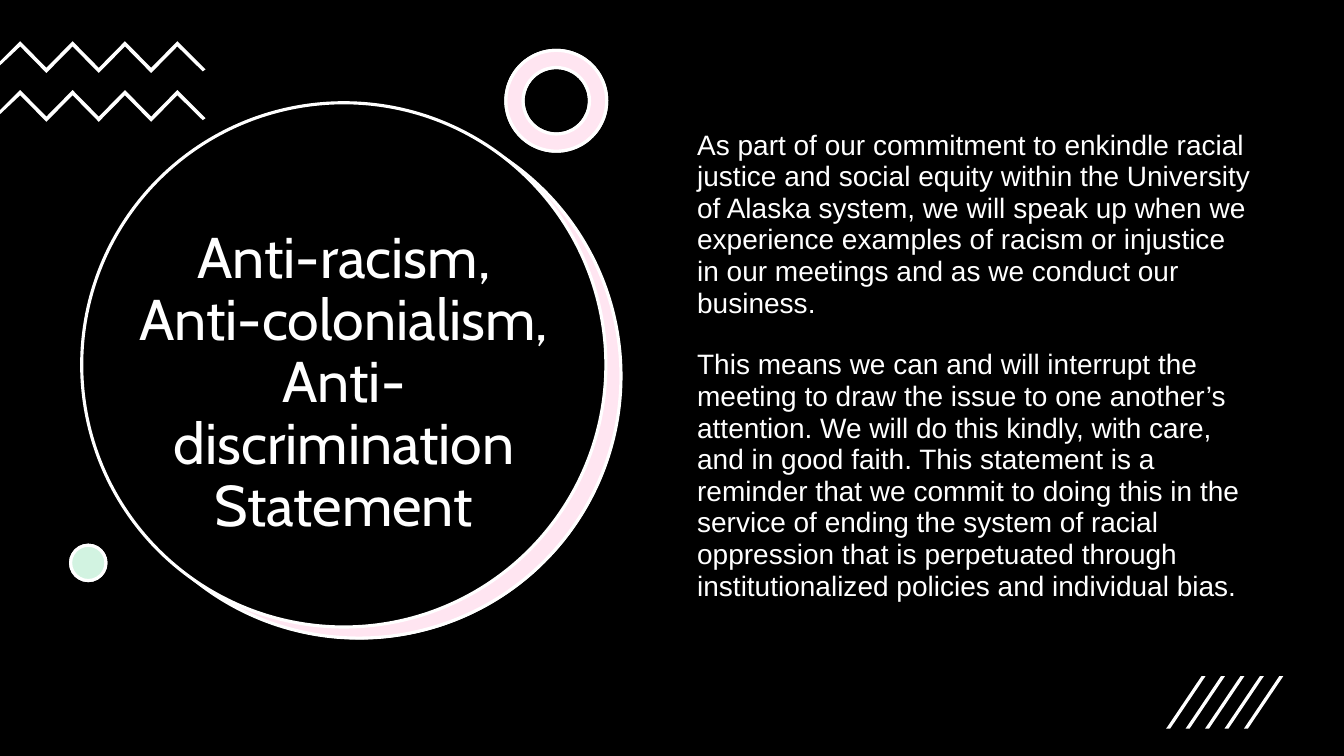
from lxml.etree import SubElement
from pptx import Presentation
from pptx.dml.color import RGBColor
from pptx.enum.shapes import MSO_SHAPE
from pptx.enum.text import MSO_ANCHOR, PP_ALIGN
from pptx.oxml.ns import qn
from pptx.util import Cm, Pt

BLACK, WHITE, PINK, GREEN = "000000", "FFFFFF", "FF80BD", "21C46B"
TITLE = "Anti-racism, Anti-colonialism, Anti-discrimination Statement"
STATEMENT = [
    "As part of our commitment to enkindle racial justice and social equity "
    "within the University of Alaska system, we will speak up when we "
    "experience examples of racism or injustice in our meetings and as we "
    "conduct our business.",
    "This means we can and will interrupt the meeting to draw the issue to one "
    "another’s attention. We will do this kindly, with care, and in good faith. "
    "This statement is a reminder that we commit to doing this in the service "
    "of ending the system of racial oppression that is perpetuated through "
    "institutionalized policies and individual bias.",
]


def paint(fill, color, opacity=100):
    """Fill with a hex colour at an opacity in percent."""
    fill.solid()
    fill.fore_color.rgb = RGBColor.from_string(color)
    if opacity < 100:
        clr = fill._xPr.find(qn("a:solidFill"))[0]
        SubElement(clr, qn("a:alpha"), val=str(opacity * 1000))


def add_round(s, kind, x, y, size, color, opacity=100, outlined=True):
    """Add a circle or ring of the given size."""
    sp = s.shapes.add_shape(kind, Cm(x), Cm(y), Cm(size), Cm(size))
    sp.shadow.inherit = False
    paint(sp.fill, color, opacity)
    if outlined:
        paint(sp.line.fill, WHITE)
        sp.line.width = Pt(2.25)
    else:
        sp.line.fill.background()
    return sp


def add_outline(s, points):
    """Add a closed white shape through points in centimetres."""
    pts = [(Cm(x), Cm(y)) for x, y in points]
    fb = s.shapes.build_freeform(*pts[0])
    fb.add_line_segments(pts[1:], close=True)
    sp = fb.convert_to_shape()
    sp.shadow.inherit = False
    paint(sp.fill, WHITE)
    sp.line.fill.background()


def add_zigzag(s, top):
    """Add a zigzag band that enters from the left edge."""
    peaks = [(0.51 + 0.66 * i, top + 0.67 * (i % 2)) for i in range(7)]
    upper = [(0, top + 0.51), *peaks, (5.18, top + 0.71)]
    lower = [(5.11, top + 0.76), *[(x, y + 0.13) for x, y in peaks[::-1]],
             (0, top + 0.61)]
    add_outline(s, upper + lower)


def add_slash(s, x, top=17.04, height=1.32):
    """Add one slanted bar."""
    add_outline(s, [(x + 0.1, top + height), (x, top + height),
                    (x + 0.89, top), (x + 0.99, top)])


def add_text(s, box, texts, font, para, anchor=MSO_ANCHOR.TOP, gap=0):
    """Add a text box with one paragraph per text."""
    tf = s.shapes.add_textbox(*[Cm(v) for v in box]).text_frame
    tf.word_wrap = True
    tf.vertical_anchor = anchor
    for i, text in enumerate(texts):
        p = tf.add_paragraph() if i else tf.paragraphs[0]
        r = p.add_run()
        r.text = text
        for name, value in para.items():
            setattr(p, name, value)
        for name, value in font.items():
            setattr(r.font, name, value)
        r.font.color.rgb = RGBColor.from_string(WHITE)
        p.space_before = Pt(gap if i else 0)


def main():
    """Build the slide and save it."""
    prs = Presentation()
    prs.slide_width, prs.slide_height = Cm(33.87), Cm(19.05)
    s = prs.slides.add_slide(prs.slide_layouts[6])
    paint(s.background.fill, BLACK)

    add_round(s, MSO_SHAPE.OVAL, 2.46, 2.9, 13.21, WHITE, outlined=False)
    add_round(s, MSO_SHAPE.OVAL, 2.44, 2.87, 13.21, PINK, 20)
    add_round(s, MSO_SHAPE.OVAL, 2.06, 2.59, 13.21, BLACK)
    add_text(s, (3.07, 5.21, 11.2, 8.94), [TITLE],
             {"name": "Cabin", "size": Pt(41)},
             {"alignment": PP_ALIGN.CENTER, "line_spacing": 0.9},
             MSO_ANCHOR.MIDDLE)

    for top in (1.04, 2.27):
        add_zigzag(s, top)
    for color, opacity in ((WHITE, 100), (PINK, 20)):
        ring = add_round(s, MSO_SHAPE.DONUT, 12.75, 1.27, 2.54, color, opacity)
        ring.adjustments[0] = 0.17
    for color, opacity in ((WHITE, 100), (GREEN, 20)):
        add_round(s, MSO_SHAPE.OVAL, 1.78, 13.74, 0.89, color, opacity)

    add_text(s, (17.32, 3.15, 14.5, 12.09), STATEMENT,
             {"name": "Arial", "size": Pt(20)},
             {"alignment": PP_ALIGN.LEFT, "line_spacing": 0.94}, gap=21.6)
    for i in range(5):
        add_slash(s, 29.39 + 0.49 * i)
    prs.save("out.pptx")


if __name__ == "__main__":
    main()
